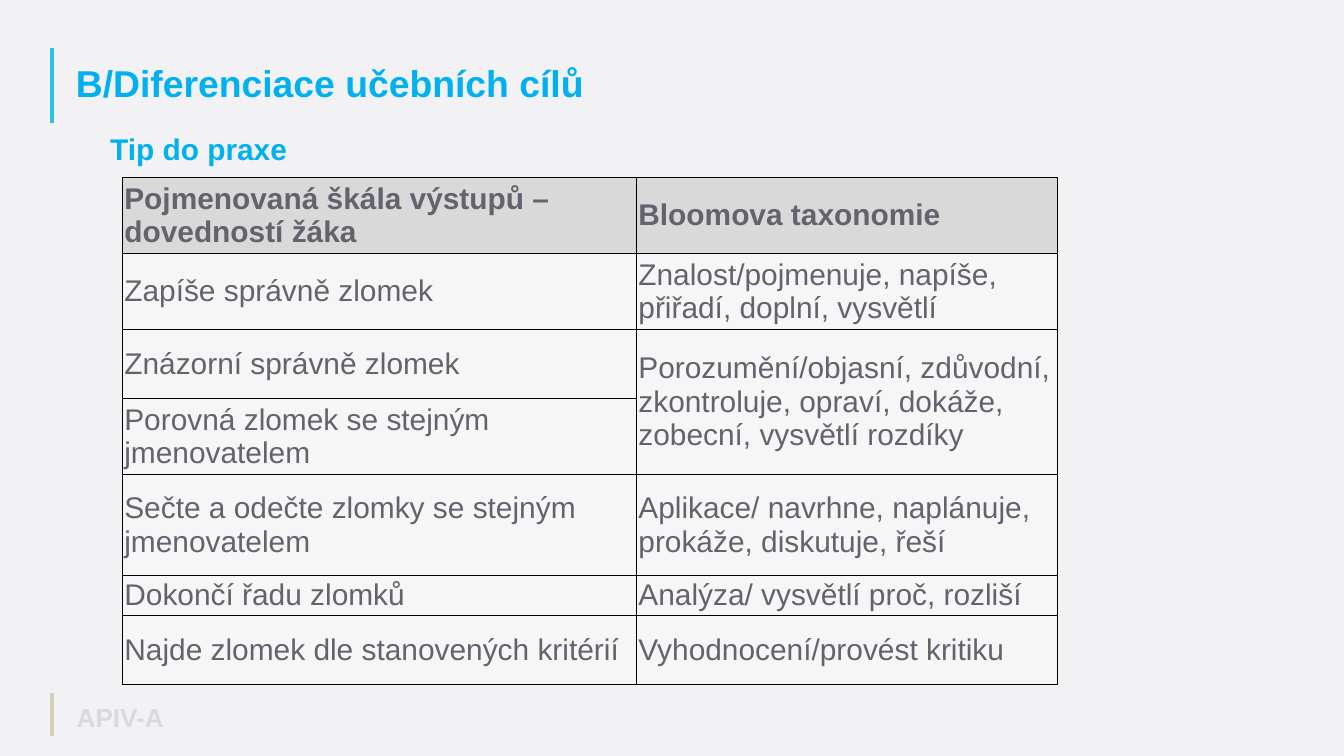
from lxml import etree
from pptx import Presentation, util as u
from pptx.dml.color import RGBColor
from pptx.enum import shapes, text
from pptx.oxml import ns

CYAN, GREY = "00B0F0", "63636E"
MID, TOP = text.MSO_ANCHOR.MIDDLE, text.MSO_ANCHOR.TOP
LEFT, JUST = text.PP_ALIGN.LEFT, text.PP_ALIGN.JUSTIFY


def rgb(code):
    return RGBColor.from_string(code)


def write(frame, words, size, color, bold, align=LEFT):
    par = frame.paragraphs[0]
    par.alignment = align
    run = par.add_run()
    run.text = words
    form = {"name": "Arial", "size": u.Pt(size), "bold": bold}
    for key, val in form.items():
        setattr(run.font, key, val)
    run.font.color.rgb = rgb(color)


deck = Presentation()
deck.slide_width, deck.slide_height = u.Cm(50.8), u.Cm(28.58)
slide = deck.slides.add_slide(deck.slide_layouts[6])
back = slide.background.fill
back.solid()
back.fore_color.rgb = rgb("F2F2F5")

# Side bars
for top, end, color in [(1.8, 4.65, "2BC3E1"), (26.19, 27.84, "D5D0B5")]:
    bar = slide.shapes.add_connector(
        shapes.MSO_CONNECTOR.STRAIGHT, u.Cm(1.96), u.Cm(top), u.Cm(1.96), u.Cm(end))
    bar.line.width = u.Pt(5)
    bar.line.color.rgb = rgb(color)
    etree.SubElement(bar._element.spPr, ns.qn("a:effectLst"))

# Title, subtitle and footer
labels = [
    ("B/Diferenciace učebních cílů", (2.62, 2.24, 45.85, 1.8), 40, CYAN, LEFT, MID),
    ("Tip do praxe", (3.91, 4.83, 43.38, 12.45), 32, CYAN, JUST, TOP),
    ("APIV-A", (2.65, 26.3, 12, 1.6), 28, "DADADD", LEFT, MID),
]
for words, area, size, color, align, anchor in labels:
    frame = slide.shapes.add_textbox(*map(u.Cm, area)).text_frame
    frame.word_wrap = True
    frame.vertical_anchor = anchor
    write(frame, words, size, color, True, align)

# Table of skills and taxonomy levels
rows = [
    ("Pojmenovaná škála výstupů – dovedností žáka", "Bloomova taxonomie"),
    ("Zapíše správně zlomek", "Znalost/pojmenuje, napíše, přiřadí, doplní, vysvětlí"),
    ("Znázorní správně zlomek",
     "Porozumění/objasní, zdůvodní, zkontroluje, opraví, dokáže, zobecní, vysvětlí rozdíky"),
    ("Porovná zlomek se stejným jmenovatelem", ""),
    ("Sečte a odečte zlomky se stejným jmenovatelem",
     "Aplikace/ navrhne, naplánuje, prokáže, diskutuje, řeší"),
    ("Dokončí řadu zlomků", "Analýza/ vysvětlí proč, rozliší"),
    ("Najde zlomek dle stanovených kritérií", "Vyhodnocení/provést kritiku"),
]
wides = [19.43, 15.9]
highs = [2.46, 2.62, 2.62, 2.62, 3.81, 1.45, 2.62]
grid = slide.shapes.add_table(
    len(rows), len(wides), u.Cm(4.62), u.Cm(6.71), u.Cm(sum(wides)), u.Cm(sum(highs))).table
for col, wide in zip(grid.columns, wides):
    col.width = u.Cm(wide)
for row, high in zip(grid.rows, highs):
    row.height = u.Cm(high)
grid.cell(2, 1).merge(grid.cell(3, 1))

pad = u.Cm(0.08)
style = {"margin_left": pad, "margin_right": pad, "margin_top": pad,
         "margin_bottom": pad, "vertical_anchor": MID}
for r, line in enumerate(rows):
    for c, words in enumerate(line):
        cell = grid.cell(r, c)
        for key, val in style.items():
            setattr(cell, key, val)
        props = cell._tc.get_or_add_tcPr()
        for side in ("lnL", "lnR", "lnT", "lnB"):
            edge = etree.SubElement(props, ns.qn("a:" + side), w=str(u.Pt(1)))
            fill = etree.SubElement(edge, ns.qn("a:solidFill"))
            etree.SubElement(fill, ns.qn("a:srgbClr"), val="000000")
        cell.fill.solid()
        cell.fill.fore_color.rgb = rgb("F6F6F6" if r else "D9D9D9")
        if words:
            write(cell.text_frame, words, 32, GREY, r == 0)

deck.save("out.pptx")
